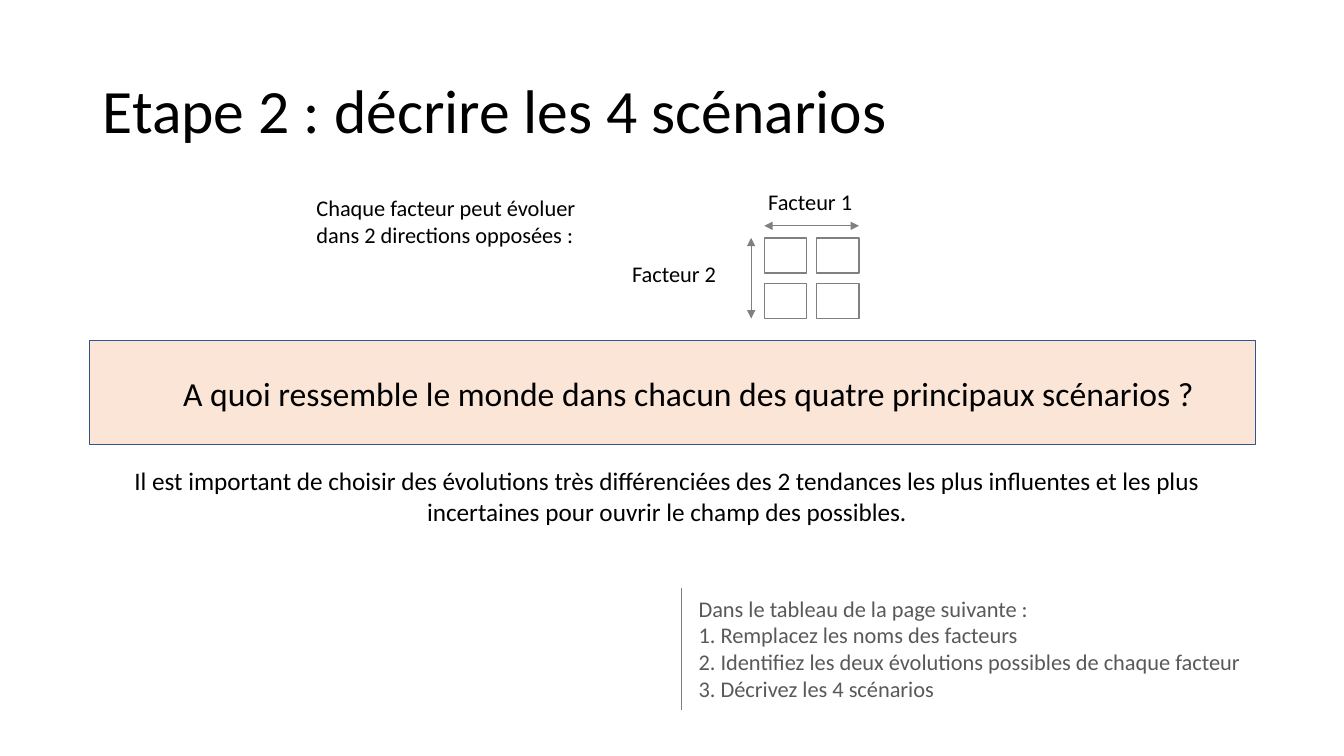
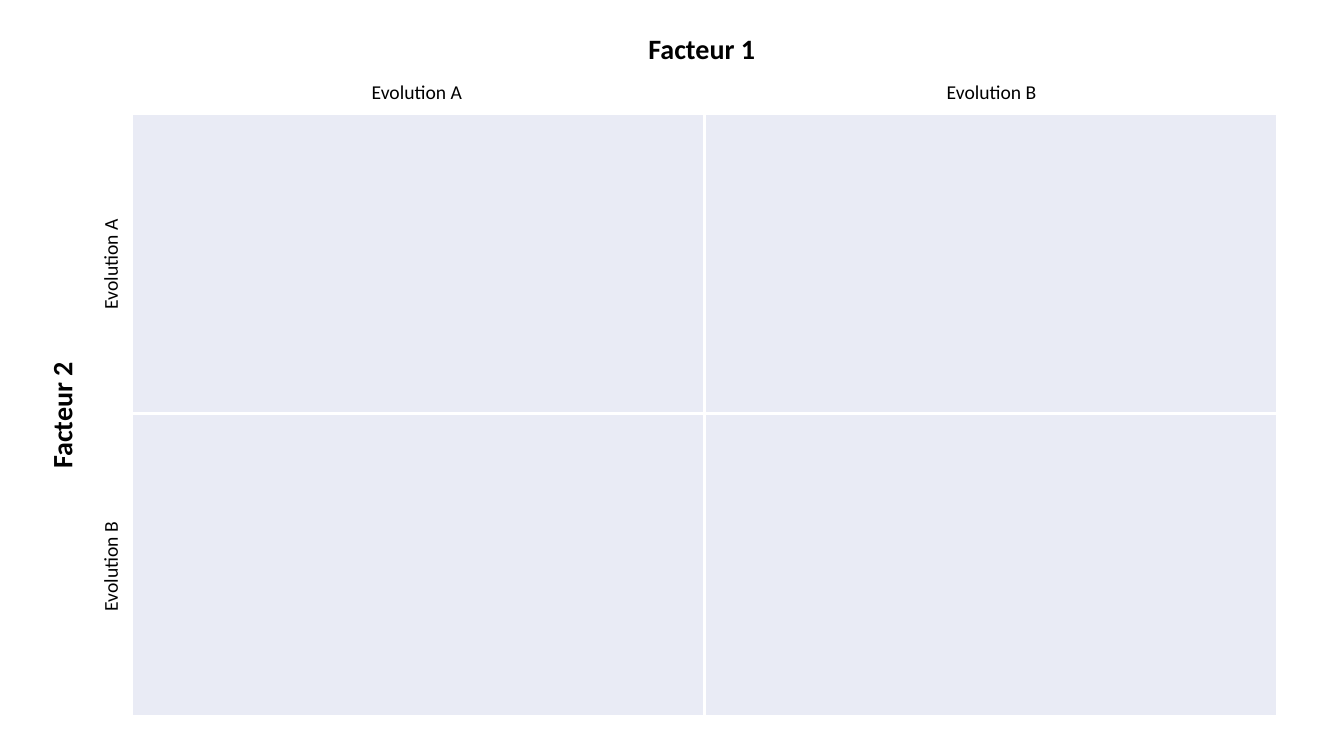
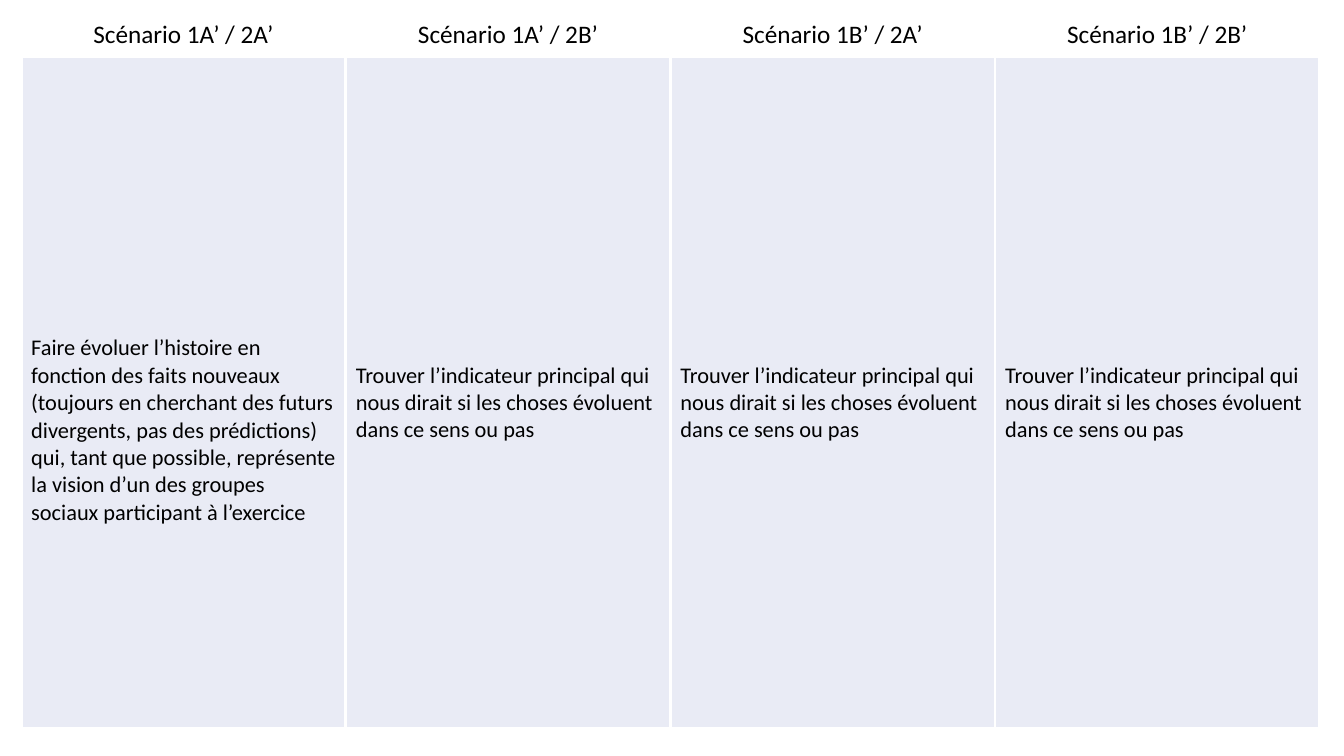
from dataclasses import dataclass
from itertools import product
from typing import Optional

from lxml import etree
from pptx import Presentation
from pptx import util as u
from pptx.dml.color import RGBColor
from pptx.enum import shapes, text
from pptx.oxml import ns

# Shared style
PX = 9144  # EMU in one px, with 100 px to the inch
FONT = "Calibri"
BLACK = RGBColor(0x00, 0x00, 0x00)
WHITE = RGBColor(0xFF, 0xFF, 0xFF)
GRAY = RGBColor(0x80, 0x80, 0x80)
DARK_GRAY = RGBColor(0x59, 0x59, 0x59)
PEACH = RGBColor(0xFB, 0xE5, 0xD6)
BLUE = RGBColor(0x32, 0x54, 0x91)
LAVENDER = RGBColor(0xE9, 0xEB, 0xF5)
LEFT, CENTER = text.PP_ALIGN.LEFT, text.PP_ALIGN.CENTER
TITLE_ONLY, BLANK = 5, 6


@dataclass(frozen=True)
class Area:
    left: int
    top: int
    width: int
    height: int

    def emu(self) -> tuple[int, ...]:
        return tuple(n * PX for n in (self.left, self.top, self.width, self.height))

    def turned(self) -> "Area":
        """The area that covers this one after a quarter turn."""
        shift = (self.width - self.height) // 2
        return Area(self.left + shift, self.top - shift, self.height, self.width)


@dataclass(frozen=True)
class Label:
    words: str
    area: Area
    size: int = 16
    color: RGBColor = BLACK
    align: text.PP_ALIGN = LEFT
    bold: bool = False
    wrap: bool = True
    upright: bool = False


@dataclass(frozen=True)
class Line:
    start: tuple[int, int]
    end: tuple[int, int]
    arrows: bool = False


@dataclass(frozen=True)
class CellText:
    words: str = ""
    size: int = 18
    align: text.PP_ALIGN = LEFT
    fill: RGBColor = LAVENDER
    inset: int = 5


def write(frame, words: str, *, size: int, color: RGBColor = BLACK,
          align: text.PP_ALIGN = LEFT, bold: bool = False,
          spacing: Optional[float] = None) -> None:
    """Fill a text frame, with one paragraph for each line of words."""
    for index, line in enumerate(words.split("\n")):
        para = frame.add_paragraph() if index else frame.paragraphs[0]
        para.alignment = align
        para.line_spacing = spacing
        span = para.add_run()
        span.text = line
        span.font.name = FONT
        span.font.size = u.Pt(size)
        span.font.bold = bold
        span.font.color.rgb = color


def add_label(page, label: Label) -> None:
    area = label.area.turned() if label.upright else label.area
    box = page.shapes.add_textbox(*area.emu())
    box.rotation = 270 if label.upright else 0
    box.text_frame.word_wrap = label.wrap
    write(box.text_frame, label.words, size=label.size, color=label.color,
          align=label.align, bold=label.bold)


def add_rectangle(page, area: Area, fill: RGBColor, line: RGBColor) -> None:
    box = page.shapes.add_shape(shapes.MSO_SHAPE.RECTANGLE, *area.emu())
    box.shadow.inherit = False
    box.fill.solid()
    box.fill.fore_color.rgb = fill
    box.line.color.rgb = line
    box.line.width = u.Pt(1)


def add_line(page, line: Line) -> None:
    ends = [n * PX for n in line.start + line.end]
    connector = page.shapes.add_connector(shapes.MSO_CONNECTOR.STRAIGHT, *ends)
    connector.line.color.rgb = GRAY
    connector.line.width = u.Pt(0.5)
    if line.arrows:
        outline = connector.line._get_or_add_ln()
        for tag in ("a:headEnd", "a:tailEnd"):
            etree.SubElement(outline, ns.qn(tag), type="triangle")
    etree.SubElement(connector._element.spPr, ns.qn("a:effectLst"))


def add_borders(cell) -> None:
    properties = cell._tc.get_or_add_tcPr()
    for side in "LRTB":
        border = etree.SubElement(properties, ns.qn(f"a:ln{side}"), w=str(u.Pt(2.25)))
        fill = etree.SubElement(border, ns.qn("a:solidFill"))
        etree.SubElement(fill, ns.qn("a:srgbClr"), val=str(WHITE))


def add_grid(page, area: Area, heights: list[int], rows: list[list[CellText]]) -> None:
    """Draw a table with equal columns and white borders."""
    columns = len(rows[0])
    table = page.shapes.add_table(len(rows), columns, *area.emu()).table
    table.first_row = table.horz_banding = False
    for column in table.columns:
        column.width = area.width * PX // columns
    for row, height, entries in zip(table.rows, heights, rows):
        row.height = height * PX
        for cell, entry in zip(row.cells, entries):
            add_borders(cell)
            cell.fill.solid()
            cell.fill.fore_color.rgb = entry.fill
            cell.margin_top = entry.inset * PX
            if entry.words:
                write(cell.text_frame, entry.words, size=entry.size, align=entry.align)


def build_instructions(deck) -> None:
    page = deck.slides.add_slide(deck.slide_layouts[TITLE_ONLY])

    # Title
    title = page.shapes.title
    title.left, title.top, title.width, title.height = Area(92, 40, 1150, 145).emu()
    title.text_frame.vertical_anchor = text.MSO_ANCHOR.MIDDLE
    write(title.text_frame, "Etape 2 : décrire les 4 scénarios", size=44, spacing=0.9)

    # Question band and small two-by-two diagram
    add_rectangle(page, Area(89, 338, 1156, 103), PEACH, BLUE)
    for top, left in product((236, 281), (758, 810)):
        add_rectangle(page, Area(left, top, 42, 35), WHITE, GRAY)

    # Diagram axes and the rule beside the steps
    for line in (
        Line((758, 224), (852, 224), arrows=True),
        Line((745, 316), (745, 236), arrows=True),
        Line((676, 583), (676, 704)),
    ):
        add_line(page, line)

    # Text
    steps = (
        "Dans le tableau de la page suivante :\n"
        "1. Remplacez les noms des facteurs\n"
        "2. Identifiez les deux évolutions possibles de chaque facteur\n"
        "3. Décrivez les 4 scénarios"
    )
    for label in (
        Label(steps, Area(683, 585, 568, 118), color=DARK_GRAY),
        Label("Chaque facteur peut évoluer dans 2 directions opposées :",
              Area(304, 188, 303, 64)),
        Label("Facteur 1", Area(752, 182, 105, 37), wrap=False),
        Label("Facteur 2", Area(617, 253, 105, 37), wrap=False),
        Label("A quoi ressemble le monde dans chacun des quatre principaux scénarios ?",
              Area(155, 365, 1056, 50), size=24, align=CENTER),
        Label("Il est important de choisir des évolutions très différenciées des "
              "2 tendances les plus influentes et les plus incertaines pour ouvrir "
              "le champ des possibles.",
              Area(79, 457, 1165, 71), size=18, align=CENTER),
    ):
        add_label(page, label)


def build_matrix(deck) -> None:
    page = deck.slides.add_slide(deck.slide_layouts[BLANK])
    add_grid(page, Area(131, 113, 1136, 598), [297, 301], [[CellText()] * 2] * 2)

    # Factor names
    for words, area, upright in (
        ("Facteur 1", Area(126, 26, 1140, 44), False),
        ("Facteur 2", Area(39, 113, 44, 598), True),
    ):
        add_label(page, Label(words, area, size=20, align=CENTER, bold=True, upright=upright))

    # Evolutions along each side
    for words, left, top, height in (
        ("Evolution A", 131, 117, 289),
        ("Evolution B", 701, 412, 299),
    ):
        add_label(page, Label(words, Area(left, 74, 565, 34), size=14, align=CENTER))
        add_label(page, Label(words, Area(93, top, 34, height), size=14, align=CENTER,
                              upright=True))


def build_scenarios(deck) -> None:
    page = deck.slides.add_slide(deck.slide_layouts[BLANK])
    headings = [
        CellText(f"Scénario 1{first}’ / 2{second}’", align=CENTER, fill=WHITE)
        for first, second in product("AB", repeat=2)
    ]
    story = CellText(
        "Faire évoluer l’histoire en fonction des faits nouveaux (toujours en "
        "cherchant des futurs divergents, pas des prédictions) qui, tant que "
        "possible, représente la vision d’un des groupes sociaux participant à "
        "l’exercice", size=16, inset=276)
    indicator = CellText(
        "Trouver l’indicateur principal qui nous dirait si les choses évoluent "
        "dans ce sens ou pas", size=16, inset=303)
    add_grid(page, Area(21, 14, 1288, 709), [42, 667], [headings, [story] + [indicator] * 3])


def main() -> None:
    deck = Presentation()
    deck.slide_width, deck.slide_height = 1333 * PX, 750 * PX
    for build in (build_instructions, build_matrix, build_scenarios):
        build(deck)
    deck.save("out.pptx")


if __name__ == "__main__":
    main()
